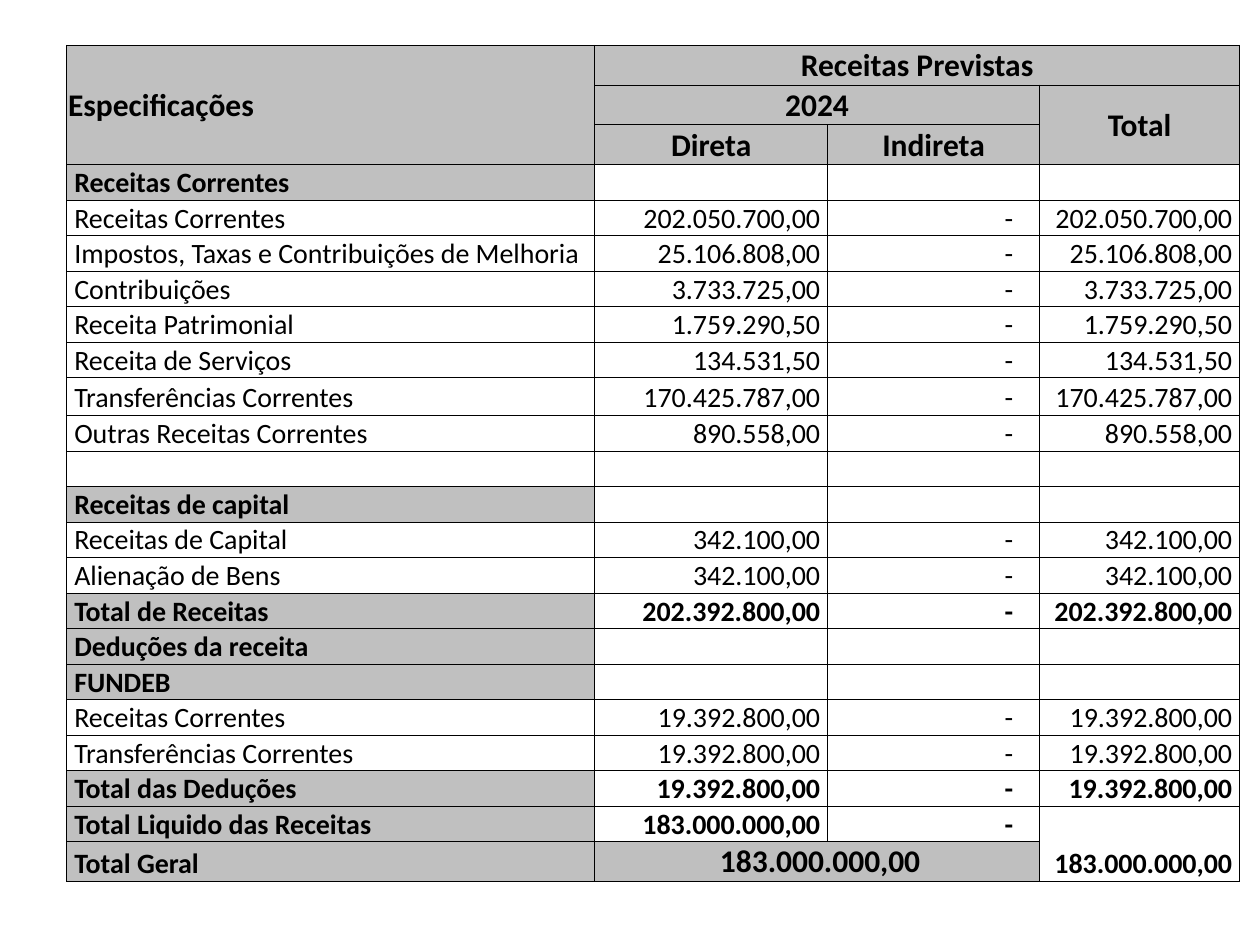
from lxml import etree
from pptx import Presentation
from pptx.dml.color import RGBColor
from pptx.enum.text import MSO_ANCHOR, PP_ALIGN
from pptx.oxml.ns import qn
from pptx.util import Inches, Pt

COLORS = {"ink": "000000", "white": "FFFFFF", "header": "C0C0C0", "grand_total": "BFBFBF"}
FONT = "Calibri"
HEADER_SIZE, BODY_SIZE = 18, 16
EDGE, PADDING, DASH_PADDING = 0.01, 0.06, 0.21

COLUMN_WIDTHS = [4.19, 1.85, 1.68, 1.59]
HEADER_ROWS = 3
HEADER_HEIGHT, BODY_HEIGHT = 0.31, 0.28
SPECIAL_HEIGHTS = {"Transferências Correntes": 0.3, "Total Geral": HEADER_HEIGHT}

# Kind of row, label, amount
REVENUES = [
    ("section", "Receitas Correntes", ""),
    ("item", "Receitas Correntes", "202.050.700,00"),
    ("item", "Impostos, Taxas e Contribuições de Melhoria", "25.106.808,00"),
    ("item", "Contribuições", "3.733.725,00"),
    ("item", "Receita Patrimonial", "1.759.290,50"),
    ("item", "Receita de Serviços", "134.531,50"),
    ("item", "Transferências Correntes", "170.425.787,00"),
    ("item", "Outras Receitas Correntes", "890.558,00"),
    ("item", "", ""),
    ("section", "Receitas de capital", ""),
    ("item", "Receitas de Capital", "342.100,00"),
    ("item", "Alienação de Bens", "342.100,00"),
    ("section", "Total de Receitas", "202.392.800,00"),
    ("section", "Deduções da receita", ""),
    ("section", "FUNDEB", ""),
    ("item", "Receitas Correntes", "19.392.800,00"),
    ("item", "Transferências Correntes", "19.392.800,00"),
    ("section", "Total das Deduções", "19.392.800,00"),
    ("section", "Total Liquido das Receitas", "183.000.000,00"),
]
GRAND_TOTAL = ("Total Geral", "183.000.000,00")


def add_borders(cell):
    properties = cell._tc.get_or_add_tcPr()
    for side in ("a:lnL", "a:lnR", "a:lnT", "a:lnB"):
        line = etree.SubElement(properties, qn(side), w=str(Pt(0.5)))
        fill = etree.SubElement(line, qn("a:solidFill"))
        etree.SubElement(fill, qn("a:srgbClr"), val=COLORS["ink"])


def format_blank_cell(cell):
    """Give every cell its border, fill, insets and a line height that fits its row."""
    add_borders(cell)
    cell.fill.solid()
    cell.fill.fore_color.rgb = RGBColor.from_string(COLORS["white"])
    cell.margin_left = cell.margin_right = cell.margin_top = Inches(EDGE)
    cell.margin_bottom = 0
    para = cell.text_frame.paragraphs[0]
    etree.SubElement(para._p, qn("a:endParaRPr"), sz=str(BODY_SIZE * 100))


def write_cell(cell, text, bold=True, size=BODY_SIZE, align=PP_ALIGN.LEFT,
               fill=None, left=EDGE, right=EDGE, anchor=MSO_ANCHOR.BOTTOM):
    cell.vertical_anchor = anchor
    cell.margin_left, cell.margin_right = Inches(left), Inches(right)
    if fill:
        cell.fill.fore_color.rgb = RGBColor.from_string(COLORS[fill])
    if not text:
        return
    para = cell.text_frame.paragraphs[0]
    para.text = text
    para.alignment = align
    font = para.runs[0].font
    font.name, font.size, font.bold = FONT, Pt(size), bold
    font.color.rgb = RGBColor.from_string(COLORS["ink"])


def write_header(table):
    table.cell(0, 0).merge(table.cell(2, 0))
    table.cell(0, 1).merge(table.cell(0, 3))
    table.cell(1, 1).merge(table.cell(1, 2))
    table.cell(1, 3).merge(table.cell(2, 3))
    headings = [
        (0, 0, "Especificações", PP_ALIGN.LEFT, MSO_ANCHOR.MIDDLE),
        (0, 1, "Receitas Previstas", PP_ALIGN.CENTER, MSO_ANCHOR.BOTTOM),
        (1, 1, "2024", PP_ALIGN.CENTER, MSO_ANCHOR.BOTTOM),
        (1, 3, "Total", PP_ALIGN.CENTER, MSO_ANCHOR.MIDDLE),
        (2, 1, "Direta", PP_ALIGN.CENTER, MSO_ANCHOR.BOTTOM),
        (2, 2, "Indireta", PP_ALIGN.CENTER, MSO_ANCHOR.BOTTOM),
    ]
    for row, column, text, align, anchor in headings:
        write_cell(table.cell(row, column), text, size=HEADER_SIZE, align=align,
                   fill="header", anchor=anchor)


def write_revenue(table, row, kind, label, amount):
    bold = kind == "section"
    write_cell(table.cell(row, 0), label, bold, left=PADDING,
               fill="header" if bold else None)
    if amount:
        values = [(amount, PADDING), ("-", DASH_PADDING), (amount, PADDING)]
        for column, (value, padding) in enumerate(values, start=1):
            write_cell(table.cell(row, column), value, bold,
                       align=PP_ALIGN.RIGHT, right=padding)


def write_grand_total(table, row):
    label, amount = GRAND_TOTAL
    table.cell(row, 1).merge(table.cell(row, 2))
    table.cell(row - 1, 3).merge(table.cell(row, 3))
    write_cell(table.cell(row, 0), label, left=PADDING, fill="header")
    write_cell(table.cell(row, 1), amount, size=HEADER_SIZE, align=PP_ALIGN.CENTER,
               fill="grand_total", left=PADDING)


def add_revenue_table(slide):
    labels = [label for _, label, _ in REVENUES] + [GRAND_TOTAL[0]]
    heights = [HEADER_HEIGHT] * HEADER_ROWS
    heights += [SPECIAL_HEIGHTS.get(label, BODY_HEIGHT) for label in labels]
    # Only the first of the two transfer rows is taller
    heights[HEADER_ROWS + len(labels) - 4] = BODY_HEIGHT
    frame = slide.shapes.add_table(
        len(heights), len(COLUMN_WIDTHS), Inches(0.53), Inches(0.36),
        Inches(sum(COLUMN_WIDTHS)), Inches(sum(heights)))
    table = frame.table
    table.first_row = table.horz_banding = False
    for column, width in zip(table.columns, COLUMN_WIDTHS):
        column.width = Inches(width)
    for row, height in zip(table.rows, heights):
        row.height = Inches(height)
    for cell in table.iter_cells():
        format_blank_cell(cell)

    write_header(table)
    for row, revenue in enumerate(REVENUES, start=HEADER_ROWS):
        write_revenue(table, row, *revenue)
    write_grand_total(table, len(heights) - 1)


def main():
    deck = Presentation()
    deck.slide_width, deck.slide_height = Inches(10), Inches(7.5)
    slide = deck.slides.add_slide(deck.slide_layouts[6])
    add_revenue_table(slide)
    deck.save("out.pptx")


if __name__ == "__main__":
    main()
